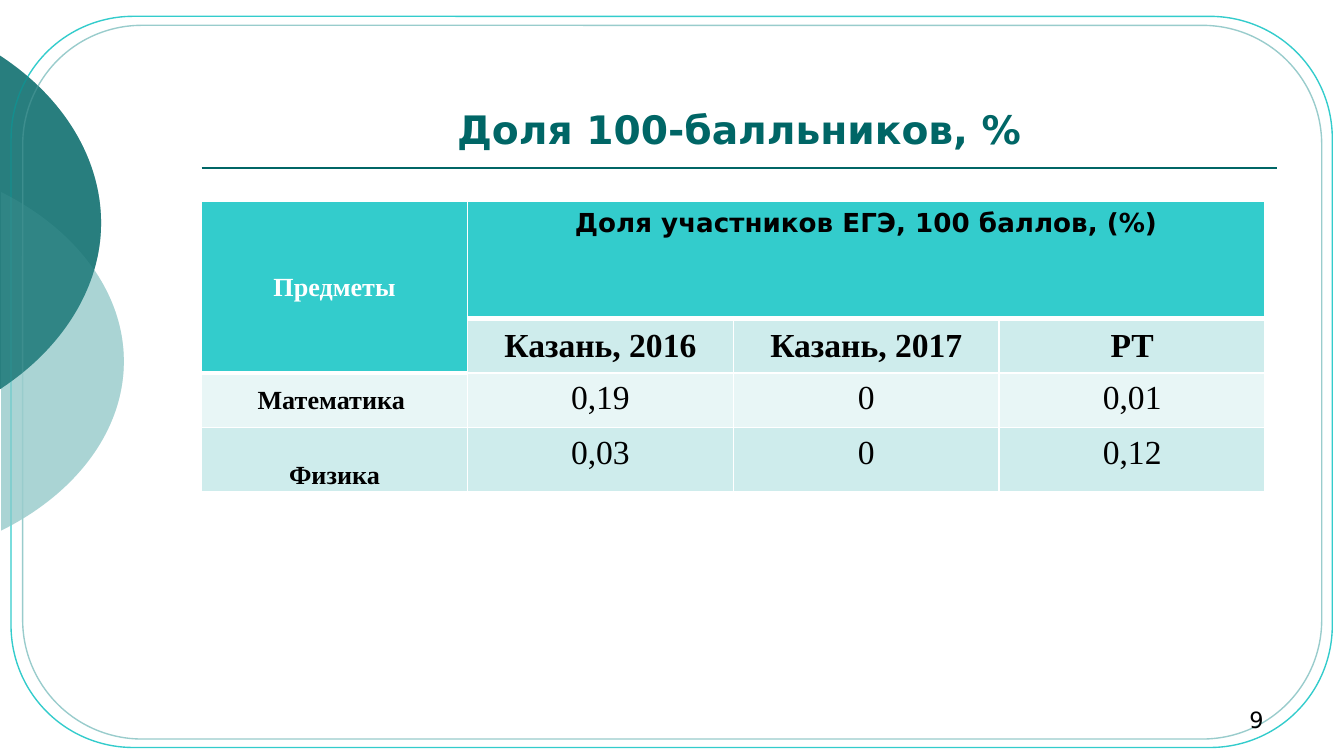
"""Build the slide with the share of top exam scores by subject."""
from lxml.etree import SubElement
from pptx import Presentation
from pptx.dml.color import RGBColor
from pptx.enum.shapes import MSO_CONNECTOR, MSO_SHAPE
from pptx.enum.text import MSO_ANCHOR, PP_ALIGN
from pptx.oxml.ns import qn
from pptx.util import Cm, Pt

TITLE = "Доля 100-балльников, %"
PAGE_NUMBER = "9"
HEADERS = ["Предметы", "Доля участников ЕГЭ, 100 баллов, (%)"]
REGIONS = ["Казань, 2016", "Казань, 2017", "РТ"]
SUBJECTS = [("Математика ", "0,19", "0", "0,01"), ("Физика", "0,03", "0", "0,12")]

TEAL, AQUA, PALE, BLACK, WHITE = "006666", "33CCCC", "99CCCC", "000000", "FFFFFF"
ROW_FILLS = [AQUA, "CEECEC", "E8F6F6", "CEECEC"]
ROW_HEIGHTS = [2.21, 1.03, 1.03, 1.22]
LEFT, WIDTH, TABLE_WIDTH = 3.81, 20.32, 20.1

ARCS = [
    (PALE, 58, (-7.82, 3.02, 10.16, 7.62),
     [(0.02, 3.63), (1.45, 4.34), (2.34, 5.54), (2.34, 6.83),
      (2.34, 8.13), (1.45, 9.32), (0.02, 10.03)]),
    (TEAL, 60, (-9.32, 0, 11.23, 8.41),
     [(-0.02, 1.04), (1.2, 1.83), (1.91, 3), (1.91, 4.22),
      (1.91, 5.41), (1.2, 6.58), (-0.02, 7.37)]),
]
FRAMES = [(AQUA, 0.21, 0.31, 24.97, 13.82), (PALE, 0.43, 0.48, 24.55, 13.49)]

SANS, SERIF = "DejaVu Sans", "Times New Roman"
TITLE_FONT = {"name": SANS, "size": Pt(21), "bold": True}
NUMBER_FONT = {"name": SANS, "size": Pt(12), "bold": False}
GROUP_FONT = {"name": SANS, "size": Pt(14), "bold": True}
SUBJECT_FONT = {"name": SERIF, "size": Pt(14), "bold": True}
REGION_FONT = {"name": SERIF, "size": Pt(18), "bold": True}
VALUE_FONT = {"name": SERIF, "size": Pt(18), "bold": False}
TIGHT = {"margin_left": Cm(0.03), "margin_right": Cm(0.03),
         "margin_top": Cm(0.03), "margin_bottom": 0}


def color(code):
    return RGBColor.from_string(code)


def apply(target, settings):
    for key, setting in settings.items():
        setattr(target, key, setting)


def write(frame, text, font, ink=BLACK, align=PP_ALIGN.CENTER):
    paragraph = frame.paragraphs[0]
    paragraph.alignment = align
    run = paragraph.add_run()
    run.text = text
    apply(run.font, font)
    run.font.color.rgb = color(ink)


def add_text(slide, place, text, font, ink, align):
    frame = slide.shapes.add_textbox(*map(Cm, place)).text_frame
    apply(frame, {"word_wrap": True, "vertical_anchor": MSO_ANCHOR.BOTTOM})
    write(frame, text, font, ink, align)


def bend(arc, box, knots):
    left, top, width, height = map(Cm, box)
    apply(arc, {"left": left, "top": top, "width": width, "height": height})
    outline = next(arc._element.spPr.iter(qn("a:path")))
    for step in list(outline):
        outline.remove(step)
    outline.set("w", str(width))
    outline.set("h", str(height))
    for tag, points in (("moveTo", knots[:1]), ("cubicBezTo", knots[1:4]),
                        ("cubicBezTo", knots[4:]), ("close", [])):
        step = SubElement(outline, qn(f"a:{tag}"))
        for x, y in points:
            SubElement(step, qn("a:pt"), x=str(Cm(x) - left), y=str(Cm(y) - top))


def add_arcs(slide):
    for tint, opacity, box, knots in ARCS:
        start, *others = [(Cm(x), Cm(y)) for x, y in knots]
        builder = slide.shapes.build_freeform(*start)
        builder.add_line_segments(others, close=True)
        arc = builder.convert_to_shape()
        bend(arc, box, knots)
        arc.shadow.inherit = False
        arc.line.fill.background()
        arc.fill.solid()
        arc.fill.fore_color.rgb = color(tint)
        tint_xml = next(arc._element.spPr.iter(qn("a:srgbClr")))
        SubElement(tint_xml, qn("a:alpha"), val=str(opacity * 1000))


def add_frames(slide):
    for tint, *place in FRAMES:
        frame = slide.shapes.add_shape(MSO_SHAPE.ROUNDED_RECTANGLE, *map(Cm, place))
        frame.adjustments[0] = 0.167
        frame.shadow.inherit = False
        frame.fill.background()
        frame.line.color.rgb = color(tint)
        frame.line.width = Pt(0.75)


def add_rule(slide):
    rule = slide.shapes.add_connector(
        MSO_CONNECTOR.STRAIGHT, Cm(LEFT), Cm(3.18), Cm(LEFT + WIDTH), Cm(3.18))
    rule.line.color.rgb = color(TEAL)
    rule.line.width = Pt(1)
    SubElement(rule._element.spPr, qn("a:effectLst"))


def style_cell(cell, row, column):
    header_end = 0 if column else 1
    widths = {"lnL": 1, "lnR": 1, "lnT": 3 if row == header_end + 1 else 1,
              "lnB": 3 if row <= header_end else 1}
    for edge, width in widths.items():
        border = SubElement(cell._tc.get_or_add_tcPr(), qn(f"a:{edge}"), w=str(Pt(width)))
        SubElement(SubElement(border, qn("a:solidFill")), qn("a:srgbClr"), val=WHITE)
    cell.fill.solid()
    cell.fill.fore_color.rgb = color(ROW_FILLS[row])


def fill_cell(cell, text, font, anchor, ink=BLACK):
    if anchor != MSO_ANCHOR.TOP:
        apply(cell, TIGHT)
    if anchor == MSO_ANCHOR.BOTTOM:
        cell.margin_bottom = Cm(0.04)
    cell.vertical_anchor = anchor
    write(cell.text_frame, text, font, ink)


def add_scores(slide):
    scores = slide.shapes.add_table(
        4, 4, Cm(LEFT), Cm(LEFT), Cm(TABLE_WIDTH), Cm(sum(ROW_HEIGHTS))).table
    for column in scores.columns:
        column.width = Cm(TABLE_WIDTH / 4)
    for row, height in enumerate(ROW_HEIGHTS):
        scores.rows[row].height = Cm(height)
        for column in range(4):
            style_cell(scores.cell(row, column), row, column)
    scores.cell(0, 0).merge(scores.cell(1, 0))
    scores.cell(0, 1).merge(scores.cell(0, 3))

    middle, top, bottom = MSO_ANCHOR.MIDDLE, MSO_ANCHOR.TOP, MSO_ANCHOR.BOTTOM
    fill_cell(scores.cell(0, 0), HEADERS[0], SUBJECT_FONT, middle, WHITE)
    fill_cell(scores.cell(0, 1), HEADERS[1], GROUP_FONT, top)
    for column, region in enumerate(REGIONS, 1):
        fill_cell(scores.cell(1, column), region, REGION_FONT, middle)
    for row, ((subject, *shares), anchor) in enumerate(zip(SUBJECTS, (middle, bottom)), 2):
        fill_cell(scores.cell(row, 0), subject, SUBJECT_FONT, anchor)
        for column, share in enumerate(shares, 1):
            fill_cell(scores.cell(row, column), share, VALUE_FONT, top)


def main():
    deck = Presentation()
    apply(deck, {"slide_width": Cm(25.4), "slide_height": Cm(14.29)})
    slide = deck.slides.add_slide(deck.slide_layouts[6])
    for add_part in (add_arcs, add_frames, add_rule, add_arcs):
        add_part(slide)
    add_text(slide, (LEFT, 0.63, WIDTH, 2.38), TITLE, TITLE_FONT, TEAL, PP_ALIGN.CENTER)
    add_scores(slide)
    add_text(slide, (18.2, 13.01, 5.93, 0.97), PAGE_NUMBER, NUMBER_FONT, BLACK, PP_ALIGN.RIGHT)
    deck.save("out.pptx")


if __name__ == "__main__":
    main()
